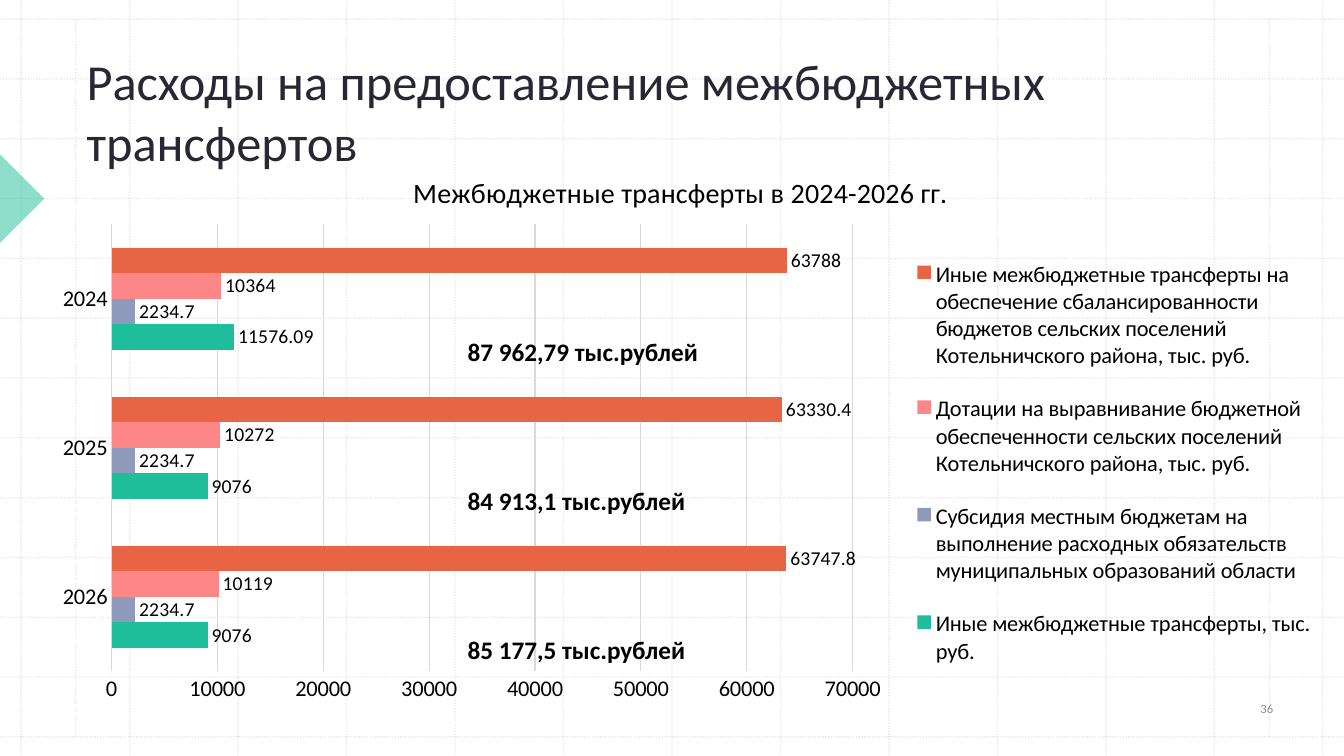
from lxml.etree import SubElement
from pptx import Presentation
from pptx.chart.data import CategoryChartData
from pptx.dml.color import RGBColor
from pptx.enum.chart import XL_CHART_TYPE, XL_LABEL_POSITION, XL_LEGEND_POSITION, XL_TICK_MARK
from pptx.enum.dml import MSO_LINE
from pptx.enum.shapes import MSO_CONNECTOR, MSO_SHAPE
from pptx.enum.text import MSO_ANCHOR, PP_ALIGN
from pptx.oxml import parse_xml
from pptx.oxml.ns import nsdecls, qn
from pptx.util import Inches, Pt

BLACK = RGBColor(0x00, 0x00, 0x00)
INK = RGBColor(0x2A, 0x27, 0x35)
GRAY = RGBColor(0x8C, 0x8C, 0x8C)
GRID = RGBColor(0xBC, 0xBC, 0xBC)
RULE = RGBColor(0xD9, 0xD9, 0xD9)
GREEN = RGBColor(0x1E, 0xBE, 0x9B)
BLUE = RGBColor(0x8F, 0x99, 0xBB)
PINK = RGBColor(0xFD, 0x86, 0x86)
CORAL = RGBColor(0xE7, 0x64, 0x45)

YEARS = ["2026", "2025", "2024"]
GRANTS = [
    ("Иные межбюджетные трансферты, тыс. руб.", GREEN, (9076, 9076, 11576.09)),
    ("Субсидия местным бюджетам на выполнение расходных обязательств "
     "муниципальных образований области", BLUE, (2234.7, 2234.7, 2234.7)),
    ("Дотации на выравнивание бюджетной обеспеченности сельских поселений "
     "Котельничского района, тыс. руб.", PINK, (10119, 10272, 10364)),
    ("Иные межбюджетные трансферты на обеспечение сбалансированности бюджетов "
     "сельских поселений Котельничского района, тыс. руб.", CORAL,
     (63747.8, 63330.4, 63788)),
]
TOTALS = ["87 962,79 тыс.рублей", "84 913,1 тыс.рублей", "85 177,5 тыс.рублей"]


class Painter:
    face = "Calibri"

    def __init__(self, slide):
        self.slide = slide
        self.shapes = slide.shapes

    def style(self, font, size, color=BLACK, bold=False):
        font.name = self.face
        font.size = Pt(size)
        font.bold = bold
        font.color.rgb = color

    def fade(self, fill, share):
        color = fill._xPr.find(".//" + qn("a:srgbClr"))
        SubElement(color, qn("a:alpha")).set("val", str(share * 1000))

    def line(self, x1, y1, x2, y2):
        rule = self.shapes.add_connector(
            MSO_CONNECTOR.STRAIGHT, Inches(x1), Inches(y1), Inches(x2), Inches(y2))
        rule.line.color.rgb = GRID
        rule.line.width = Pt(1)
        rule.line.dash_style = MSO_LINE.ROUND_DOT
        self.fade(rule.line.fill, 30)
        SubElement(rule._element.spPr, qn("a:effectLst"))

    def wedge(self, x, y, side):
        shape = self.shapes.add_shape(
            MSO_SHAPE.RIGHT_TRIANGLE, Inches(x), Inches(y), Inches(side), Inches(side))
        shape.rotation = 225
        shape.shadow.inherit = False
        shape.fill.solid()
        shape.fill.fore_color.rgb = GREEN
        self.fade(shape.fill, 50)
        shape.line.fill.background()

    def text(self, words, x, y, wide, high, size, color=BLACK, bold=False,
             anchor=MSO_ANCHOR.TOP, align=PP_ALIGN.LEFT):
        box = self.shapes.add_textbox(Inches(x), Inches(y), Inches(wide), Inches(high))
        frame = box.text_frame
        frame.word_wrap = True
        frame.vertical_anchor = anchor
        par = frame.paragraphs[0]
        par.text = words
        par.alignment = align
        self.style(par.font, size, color, bold)

    def place(self, part, x, y, wide, high, inner=False):
        target = '<c:layoutTarget val="inner"/>' if inner else ""
        sizes = zip("xywh", (x, y, wide, high))
        modes = "".join(f'<c:{key}Mode val="edge"/>' for key in "xy")
        rest = "".join(f'<c:{key} val="{val}"/>' for key, val in sizes)
        layout = parse_xml(
            f'<c:layout {nsdecls("c")}><c:manualLayout>{target}{modes}{rest}'
            "</c:manualLayout></c:layout>")
        for old in part.findall(qn("c:layout")):
            part.remove(old)
        spot = part.find(qn("c:legendPos"))
        if spot is None:
            part.insert(0, layout)
        else:
            spot.addnext(layout)

    def chart(self, title, x, y, wide, high):
        data = CategoryChartData()
        data.categories = YEARS
        for name, _, values in GRANTS:
            data.add_series(name, values)
        chart = self.shapes.add_chart(
            XL_CHART_TYPE.BAR_CLUSTERED, Inches(x), Inches(y),
            Inches(wide), Inches(high), data).chart
        self.style(chart.font, 16)
        chart.has_title = True
        head = chart.chart_title.text_frame.paragraphs[0]
        head.text = title
        self.style(head.font, 20)
        chart.chart_title.include_in_layout = False

        plot = chart.plots[0]
        plot.gap_width = 182
        plot.overlap = 0
        plot.vary_by_categories = False
        for row, (_, color, _) in zip(plot.series, GRANTS):
            row.format.fill.solid()
            row.format.fill.fore_color.rgb = color
            row.invert_if_negative = False
            labels = row.data_labels
            labels.show_value = True
            labels.position = XL_LABEL_POSITION.OUTSIDE_END
            self.style(labels.font, 14)

        for axis in (chart.category_axis, chart.value_axis):
            axis.major_tick_mark = XL_TICK_MARK.NONE
            axis.minor_tick_mark = XL_TICK_MARK.NONE
            self.style(axis.tick_labels.font, 16)
        edge = chart.category_axis.format.line
        chart.value_axis.format.line.fill.background()
        chart.value_axis.has_major_gridlines = True
        mesh = chart.value_axis.major_gridlines.format.line
        for rule in (edge, mesh):
            rule.color.rgb = RULE
            rule.width = Pt(0.75)
        chart.value_axis.minimum_scale = 0
        chart.value_axis.maximum_scale = 70000
        chart.value_axis.major_unit = 10000

        chart.has_legend = True
        chart.legend.position = XL_LEGEND_POSITION.RIGHT
        chart.legend.include_in_layout = False
        self.style(chart.legend.font, 16)
        area = chart._chartSpace.chart.plotArea
        self.place(area, 0.057, 0.13, 0.577, 0.795, inner=True)
        self.place(chart.legend._element, 0.68, 0.15, 0.315, 0.81)


def main():
    deck = Presentation()
    deck.slide_width = Inches(13.33)
    deck.slide_height = Inches(7.5)
    pen = Painter(deck.slides.add_slide(deck.slide_layouts[6]))

    for step in range(13):
        across = 0.21 + step * 12.91 / 12
        down = 0.19 + step * 7.12 / 12
        pen.line(across, 0, across, 7.5)
        pen.line(0, down, 13.33, down)
    for side in (0.75, 12.59):
        pen.line(side, 0.19, side, 7.31)
    pen.wedge(-0.31, 1.66, 0.62)

    pen.text("Расходы на предоставление межбюджетных трансфертов",
             0.76, 0.42, 11.29, 1.33, 36, INK, anchor=MSO_ANCHOR.BOTTOM)
    pen.text("36", 12.03, 6.8, 1.07, 0.46, 9, GRAY,
             anchor=MSO_ANCHOR.MIDDLE, align=PP_ALIGN.CENTER)
    pen.chart("Межбюджетные трансферты в 2024-2026 гг.", 0.38, 1.5, 12.74, 5.58)
    for step, total in enumerate(TOTALS):
        pen.text(total, 4.54, 3.29 + step * 1.475, 2.88, 0.4, 18, bold=True)

    deck.save("out.pptx")


if __name__ == "__main__":
    main()
